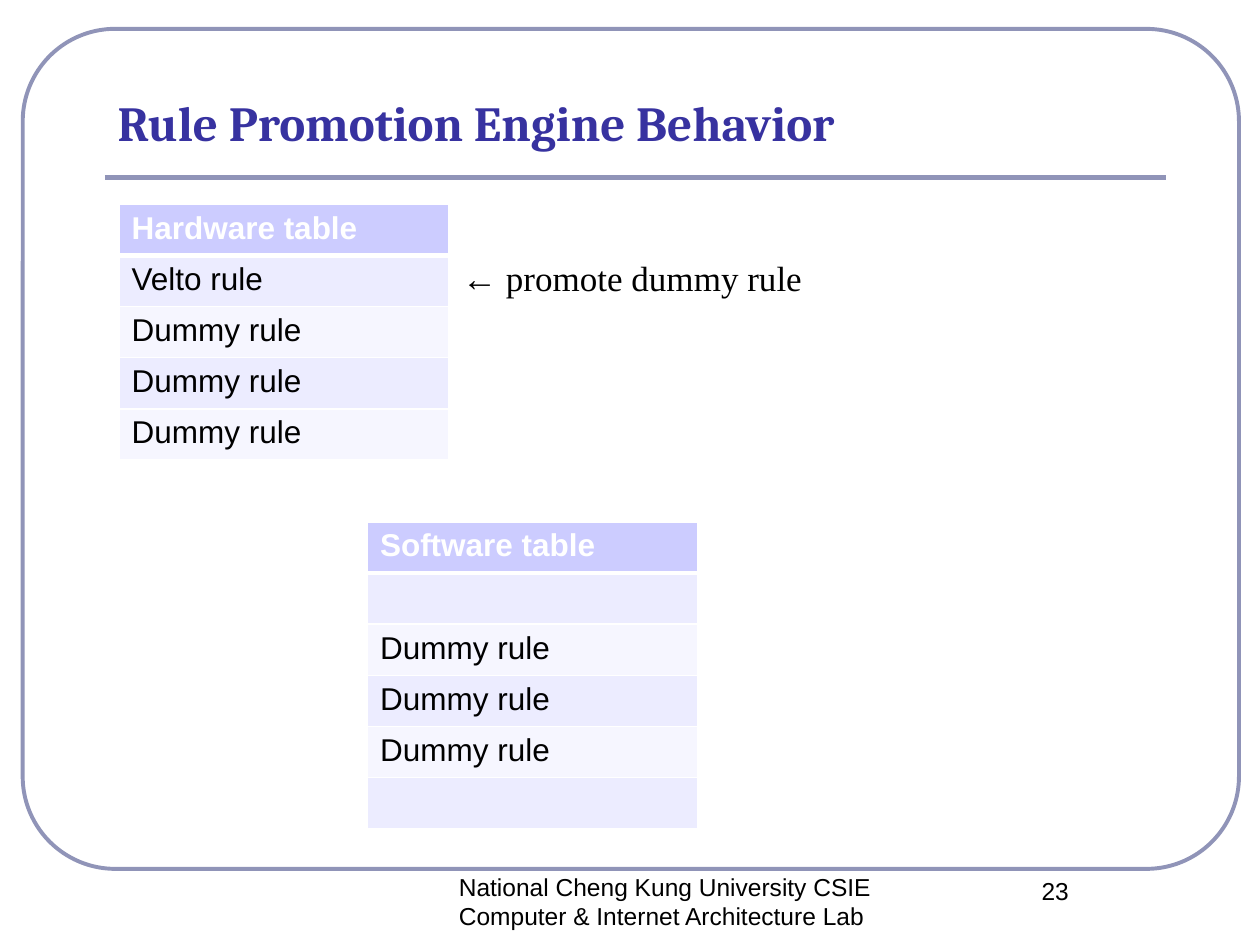
from dataclasses import dataclass

from lxml.etree import SubElement
from pptx import Presentation
from pptx.dml.color import RGBColor
from pptx.enum.shapes import MSO_CONNECTOR, MSO_SHAPE
from pptx.enum.text import MSO_ANCHOR, PP_ALIGN
from pptx.oxml.ns import qn
from pptx.util import Pt


@dataclass(frozen=True)
class Theme:
    """Colours, fonts and type sizes of the slide."""
    frame: str = "9094B8"
    title: str = "3732A0"
    text: str = "000000"
    white: str = "FFFFFF"
    header: str = "CCCCFF"
    bands: tuple = ("ECECFF", "F6F6FF")
    title_font: str = "Cambria"
    body_font: str = "Arial"
    note_font: str = "Times New Roman"
    title_size: int = 28
    note_size: int = 20
    table_size: int = 18
    footer_size: int = 14


THEME = Theme()


def write(frame, text, *, size, font=THEME.body_font, color=THEME.text, bold=False,
          align=PP_ALIGN.LEFT, anchor=MSO_ANCHOR.TOP, before=0):
    """Put formatted text into a text frame."""
    frame.word_wrap = True
    frame.vertical_anchor = anchor
    paragraph = frame.paragraphs[0]
    paragraph.alignment = align
    paragraph.space_before = Pt(before)
    run = paragraph.add_run()
    run.text = text
    run.font.size = Pt(size)
    run.font.name = font
    run.font.bold = bold
    run.font.color.rgb = RGBColor.from_string(color)


def add_label(slide, box, text, **style):
    """Add a text box at the given box."""
    label = slide.shapes.add_textbox(*map(Pt, box))
    write(label.text_frame, text, **style)


def add_frame(slide, box):
    """Draw the rounded frame and the rule under the title."""
    left, top, width, height = box
    border = slide.shapes.add_shape(MSO_SHAPE.ROUNDED_RECTANGLE, *map(Pt, box))
    border.adjustments[0] = 0.11
    border.shadow.inherit = False
    border.fill.background()
    rule_y = Pt(top + 85)
    rule = slide.shapes.add_connector(
        MSO_CONNECTOR.STRAIGHT, Pt(left + 47), rule_y, Pt(left + width - 42), rule_y)
    SubElement(rule._element.spPr, qn("a:effectLst"))
    for outline, weight in ((border.line, 2.25), (rule.line, 3)):
        outline.color.rgb = RGBColor.from_string(THEME.frame)
        outline.width = Pt(weight)


def add_title(slide, box, text):
    """Place and format the title placeholder."""
    title = slide.shapes.title
    title.left, title.top, title.width, title.height = map(Pt, box)
    write(title.text_frame, text, size=THEME.title_size, font=THEME.title_font,
          color=THEME.title, bold=True, anchor=MSO_ANCHOR.BOTTOM)


def add_borders(cell, bottom):
    """Give a cell white borders, with its own bottom weight."""
    properties = cell._tc.get_or_add_tcPr()
    for side, weight in (("L", 1), ("R", 1), ("T", 1), ("B", bottom)):
        edge = SubElement(properties, qn(f"a:ln{side}"), w=str(Pt(weight)))
        fill = SubElement(edge, qn("a:solidFill"))
        SubElement(fill, qn("a:srgbClr"), val=THEME.white)


def add_rule_table(slide, box, heading, rules):
    """Add a one-column table of rules under a heading."""
    entries = [heading, *rules]
    table = slide.shapes.add_table(len(entries), 1, *map(Pt, box)).table
    for index, entry in enumerate(entries):
        is_header = index == 0
        cell = table.cell(index, 0)
        add_borders(cell, 3 if is_header else 1)
        cell.fill.solid()
        cell.fill.fore_color.rgb = RGBColor.from_string(
            THEME.header if is_header else THEME.bands[(index - 1) % 2])
        if entry:
            write(cell.text_frame, entry, size=THEME.table_size, bold=is_header,
                  color=THEME.white if is_header else THEME.text)


def add_tables(slide, box):
    """Place the hardware table, its note and the software table."""
    left, top, width, row_height = box
    dummies = ["Dummy rule"] * 3
    add_rule_table(slide, (left, top, width, 5 * row_height),
                   "Hardware table", ["Velto rule", *dummies])
    add_rule_table(slide, (left + 142, top + 181.5, width, 6 * row_height),
                   "Software table", ["", *dummies, ""])
    add_label(slide, (left + width + 0.5, top + 26, 225, 42.5), "← promote dummy rule",
              size=THEME.note_size, font=THEME.note_font, before=4)


def add_footer(slide, box):
    """Place the laboratory name and the slide number."""
    left, top, width, height = box
    style = dict(size=THEME.footer_size, align=PP_ALIGN.CENTER)
    add_label(slide, (left, top, 312, height),
              "National Cheng Kung University CSIE Computer & Internet Architecture Lab ",
              **style)
    add_label(slide, (left + width - 126, top + 2, 126, height), "23", **style)


def main():
    """Build the slide and save it."""
    deck = Presentation()
    deck.slide_width, deck.slide_height = Pt(720), Pt(540)
    slide = deck.slides.add_slide(deck.slide_layouts[5])
    add_frame(slide, (13, 16.5, 695, 480))
    add_title(slide, (60, 43, 640, 47), "Rule Promotion Engine Behavior")
    add_footer(slide, (224, 494.8, 442, 36))
    add_tables(slide, (68, 116.8, 188.5, 29.2))
    deck.save("out.pptx")


if __name__ == "__main__":
    main()
